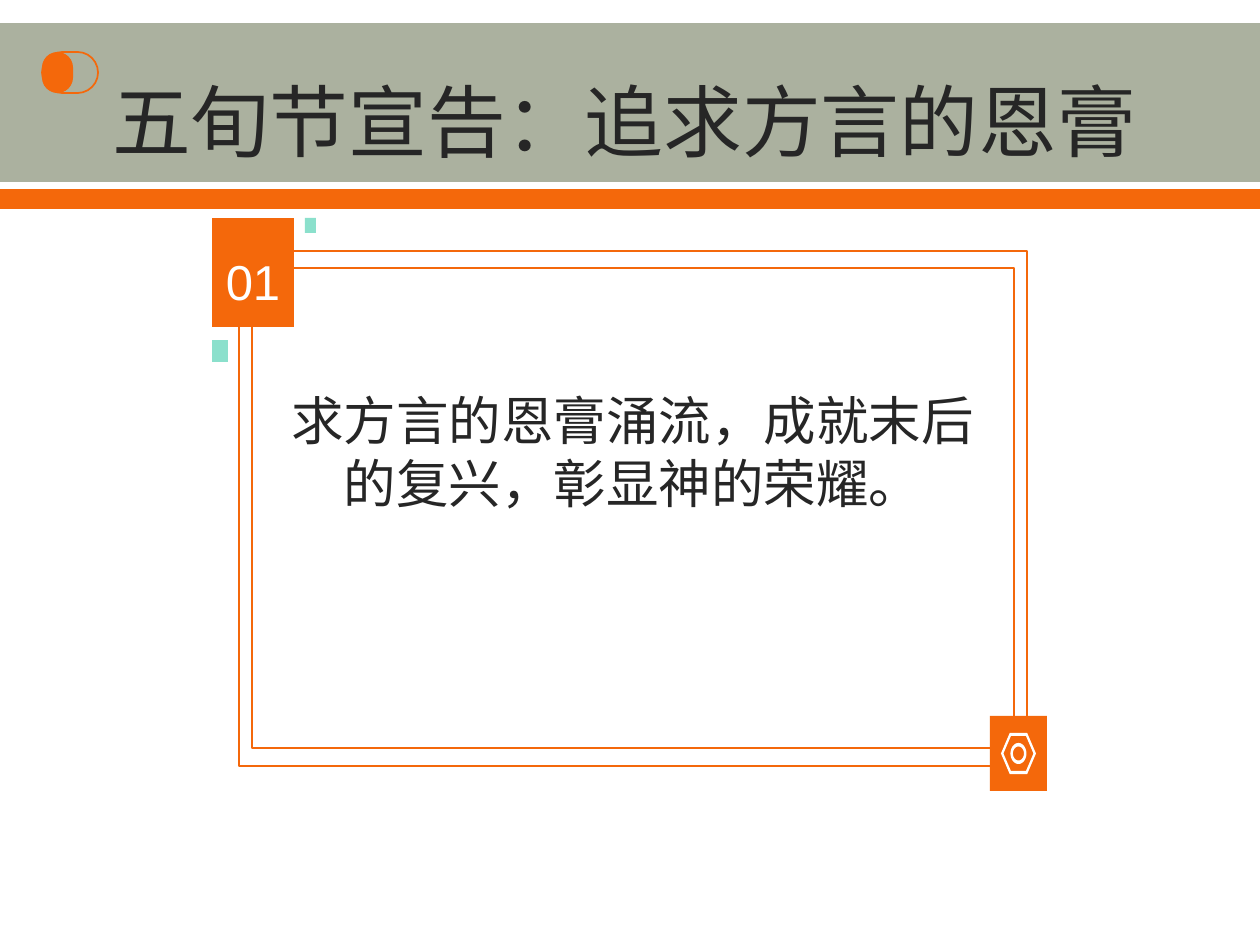
import math
from dataclasses import dataclass

import pptx
import pptx.dml.color
import pptx.enum.shapes
import pptx.enum.text
import pptx.util

PX = 914400 / 126
KIND = pptx.enum.shapes.MSO_SHAPE
ALIGN = pptx.enum.text.PP_ALIGN
ANCHOR = pptx.enum.text.MSO_ANCHOR


@dataclass(frozen=True)
class Theme:
    orange: str = "F4680B"
    sage: str = "ABB19F"
    mint: str = "8BE0CC"
    white: str = "FFFFFF"
    ink: str = "262626"
    font: str = "Arial"
    title_size: int = 45
    body_size: int = 30
    number_size: int = 28


THEME = Theme()


def emu(pixels):
    return pptx.util.Emu(round(pixels * PX))


def rgb(value):
    return pptx.dml.color.RGBColor.from_string(value)


def paint(shape, fill=None, line=None):
    shape.shadow.inherit = False
    if fill:
        shape.fill.solid()
        shape.fill.fore_color.rgb = rgb(fill)
    else:
        shape.fill.background()
    if line:
        shape.line.color.rgb = rgb(line)
        shape.line.width = pptx.util.Pt(1)
    else:
        shape.line.fill.background()


def add_block(slide, box, fill=None, line=None, kind=KIND.RECTANGLE):
    shape = slide.shapes.add_shape(kind, *map(emu, box))
    paint(shape, fill, line)
    return shape


def add_text(slide, box, text, size, color, align, anchor, spacing=1.0):
    frame = slide.shapes.add_textbox(*map(emu, box)).text_frame
    frame.word_wrap = True
    frame.margin_left = frame.margin_top = frame.margin_right = frame.margin_bottom = 0
    frame.vertical_anchor = anchor
    paragraph = frame.paragraphs[0]
    paragraph.text = text
    paragraph.alignment = align
    paragraph.line_spacing = spacing
    paragraph.font.size = pptx.util.Pt(size)
    paragraph.font.name = THEME.font
    paragraph.font.color.rgb = rgb(color)


def add_toggle(slide, box):
    left, top, width, height = box
    outline = add_block(slide, box, line=THEME.orange, kind=KIND.ROUNDED_RECTANGLE)
    knob = add_block(slide, (left, top, 31, height), THEME.orange, kind=KIND.ROUNDED_RECTANGLE)
    outline.adjustments[0] = knob.adjustments[0] = 0.5


def add_header(slide, box, title):
    left, top, width, height = box
    add_block(slide, (left, top, width, 159), THEME.sage)
    add_block(slide, (left, top + 166, width, 20), THEME.orange)
    add_text(slide, (left + 112, top + 50, 1076, 66), title, THEME.title_size,
             THEME.ink, ALIGN.LEFT, ANCHOR.MIDDLE, 1.3)
    add_toggle(slide, (left + 42, top + 29, 56, 41))


def hexagon(center_x, center_y, half_width, half_height):
    shoulder = half_width / 2
    return [(center_x + x, center_y + y) for x, y in (
        (-half_width, 0), (-shoulder, -half_height), (shoulder, -half_height),
        (half_width, 0), (shoulder, half_height), (-shoulder, half_height))]


def ellipse(center_x, center_y, radius_x, radius_y, steps=36):
    angles = [2 * math.pi * step / steps for step in range(steps)]
    return [(center_x + radius_x * math.cos(angle), center_y + radius_y * math.sin(angle))
            for angle in angles]


def add_nut_badge(slide, box):
    left, top, width, height = box
    add_block(slide, box, THEME.orange)
    center = (left + width / 2, top + height / 2)
    contours = [hexagon(*center, 17.5, 20.5), hexagon(*center, 15, 17.5)[::-1],
                ellipse(*center, 8, 10.5), ellipse(*center, 5.5, 7)[::-1]]
    builder = slide.shapes.build_freeform(*map(emu, contours[0][0]))
    for contour in contours:
        points = [(emu(x), emu(y)) for x, y in contour]
        builder.move_to(*points[0])
        builder.add_line_segments(points[1:], close=True)
    paint(builder.convert_to_shape(), THEME.white)


def add_card(slide, box, number, text):
    left, top, width, height = box
    add_block(slide, (left + 27, top + 33, 788, 515), THEME.white, THEME.orange)
    add_block(slide, (left + 40, top + 50, 762, 480), THEME.white, THEME.orange)
    add_block(slide, (left, top, 82, 109), THEME.orange)
    add_text(slide, (left + 11, top + 18, 60, 73), number, THEME.number_size,
             THEME.white, ALIGN.CENTER, ANCHOR.MIDDLE, 1.3)
    add_text(slide, (left + 60, top + 170, 721, 310), text, THEME.body_size,
             THEME.ink, ALIGN.CENTER, ANCHOR.TOP)
    add_nut_badge(slide, (left + width - 57, top + height - 75, 57, 75))
    add_block(slide, (left + 93, top, 11, 15), THEME.mint)
    add_block(slide, (left, top + 122, 16, 22), THEME.mint)


def main():
    presentation = pptx.Presentation()
    presentation.slide_width = emu(1260)
    presentation.slide_height = emu(945)
    slide = presentation.slides.add_slide(presentation.slide_layouts[6])
    add_header(slide, (0, 23, 1260, 186), "五旬节宣告：追求方言的恩膏")
    add_card(slide, (212, 218, 835, 573), "01",
             "求方言的恩膏涌流，成就末后的复兴，彰显神的荣耀。")
    presentation.save("out.pptx")


if __name__ == "__main__":
    main()
